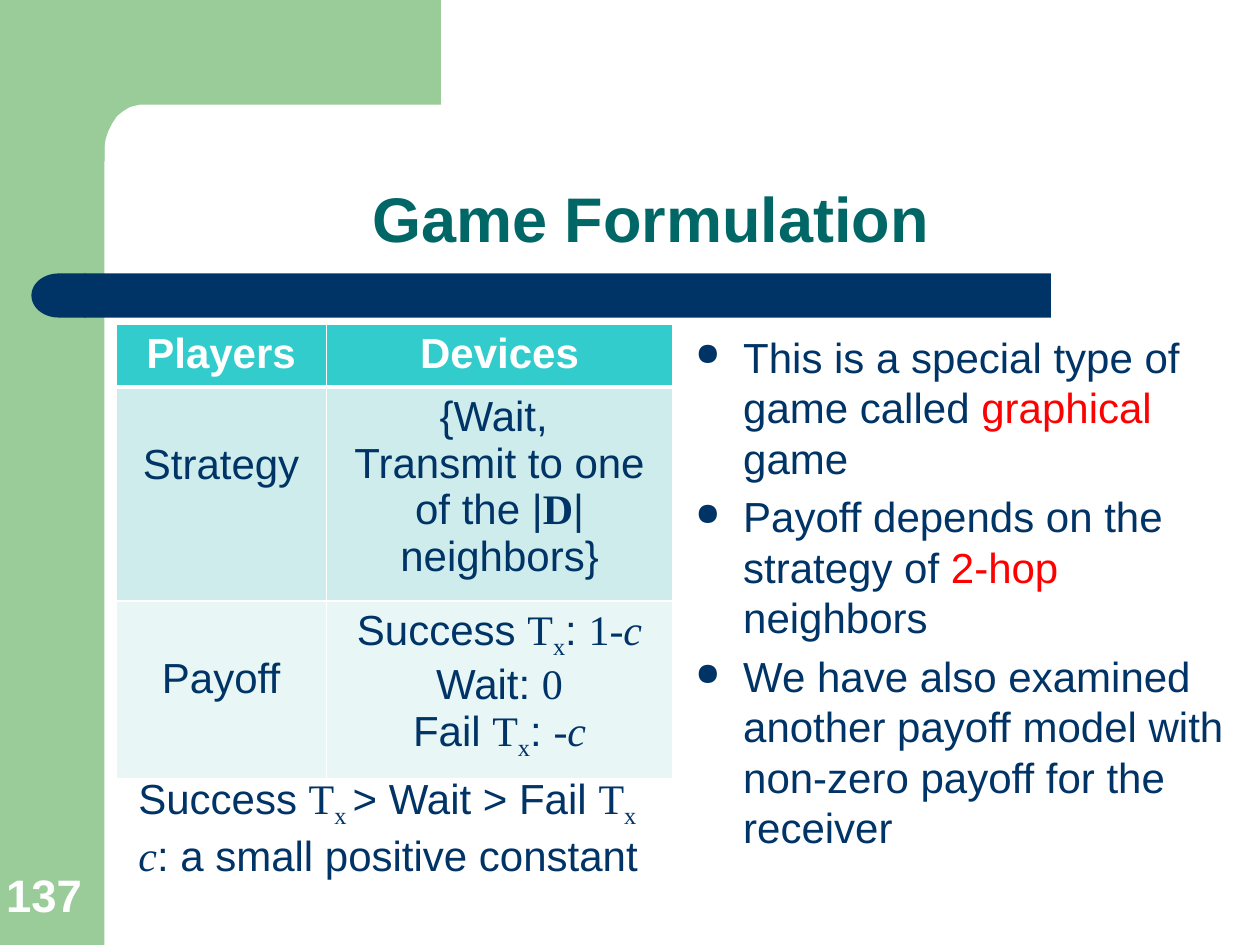
from dataclasses import dataclass
from lxml.etree import SubElement
from pptx import Presentation
from pptx.dml.color import RGBColor as Rgb
from pptx.enum.shapes import MSO_SHAPE as Kind
from pptx.enum.text import MSO_ANCHOR as Anchor, PP_ALIGN as Align
from pptx.oxml.ns import qn
from pptx.util import Inches as In, Pt


@dataclass(frozen=True)
class Theme:
    sans: str = "Arial"
    serif: str = "Times New Roman"
    green: str = "99CC99"
    navy: str = "003366"
    teal: str = "006666"
    white: str = "FFFFFF"
    red: str = "FF0000"
    rows: tuple = ("33CCCC", "CEECEC", "E8F6F6")
    title: int = 36
    page: int = 26
    text: int = 24


T = Theme()
HEAD = dict(bold=True, color=T.white)
MATH = dict(name=T.serif)
VAR = dict(name=T.serif, italic=True)
SUB = dict(name=T.serif, base="-25000")
HOT = dict(color=T.red)
TX = [("T", MATH), ("x", SUB)]

TITLE = [["Game Formulation"]]
PAGE = [["137"]]
POINTS = [
    ["This is a special type of game called ", ("graphical", HOT), " game"],
    ["Payoff depends on the strategy of ", ("2-hop", HOT), " neighbors"],
    ["We have also examined another payoff model with non-zero payoff for the receiver"],
]
GAME = [
    ([[("Players", HEAD)]], [[("Devices", HEAD)]]),
    ([["Strategy"]],
     [["{Wait, "],
      ["Transmit to one of the |", ("D", dict(name=T.serif, bold=True)), "| neighbors}"]]),
    ([["Payoff"]],
     [["Success ", *TX, ": ", ("1", MATH), ("-c", VAR)],
      ["Wait: ", ("0", MATH)],
      ["Fail ", *TX, ": ", ("-c", VAR)]]),
]
NOTES = [
    ["Success ", ("T", MATH), ("x ", SUB), "> Wait > Fail ", *TX],
    [("c", VAR), ": a small positive constant"],
]
COLS = (1.67, 2.75)
ROWS = (0.46, 1.59, 1.32)
EDGES = ("lnL", "lnR", "lnT", "lnB")

deck = Presentation()
deck.slide_width, deck.slide_height = In(10), In(7.5)
slide = deck.slides.add_slide(deck.slide_layouts[5])
shapes = slide.shapes


def place(shape, *box):
    for key, val in zip(("left", "top", "width", "height"), box):
        setattr(shape, key, In(val))


def paint(shape, color):
    shape.shadow.inherit = False
    shape.fill.solid()
    shape.fill.fore_color.rgb = Rgb.from_string(color)
    shape.line.fill.background()


def write(frame, paras, align=Align.LEFT, **look):
    frame.word_wrap = True
    for n, parts in enumerate(paras):
        para = frame.add_paragraph() if n else frame.paragraphs[0]
        para.alignment = align
        for part in parts:
            words, extra = (part, {}) if isinstance(part, str) else part
            fmt = dict(name=T.sans, size=T.text, bold=False, color=T.navy) | look | extra
            run = para.add_run()
            run.text = words
            font = run.font
            font.color.rgb = Rgb.from_string(fmt.pop("color"))
            fmt["size"] = Pt(fmt["size"])
            base = fmt.pop("base", None)
            for key, val in fmt.items():
                setattr(font, key, val)
            if base:
                run._r.get_or_add_rPr().set("baseline", base)


def label(paras, *box, **look):
    text = shapes.add_textbox(*map(In, box))
    write(text.text_frame, paras, **look)
    return text.text_frame


def bullet(para):
    para.space_before = Pt(T.text * 0.2)
    props = para._p.get_or_add_pPr()
    props.set("marL", str(In(0.38)))
    props.set("indent", str(-In(0.38)))
    tint = SubElement(props, qn("a:buClr"))
    SubElement(tint, qn("a:srgbClr"), val=T.navy)
    SubElement(props, qn("a:buSzPct"), val="75000")
    SubElement(props, qn("a:buChar"), char="●")


def border(cell, low):
    props = cell._tc.get_or_add_tcPr()
    for edge in EDGES:
        wide = low if edge == "lnB" else 1
        line = SubElement(props, qn("a:" + edge), w=str(Pt(wide)))
        fill = SubElement(line, qn("a:solidFill"))
        SubElement(fill, qn("a:srgbClr"), val=T.white)


def band(kind, color, *box):
    shape = shapes.add_shape(kind, *map(In, box))
    paint(shape, color)
    return shape


band(Kind.RECTANGLE, T.green, 0, 0, 0.83, 7.5)
pen = shapes.build_freeform(In(3.5), 0, scale=1.0)
curve = [(3.5, 0.83), (1.16, 0.83), (1.11, 0.83), (1.03, 0.85), (0.98, 0.88), (0.93, 0.92),
         (0.89, 0.98), (0.86, 1.04), (0.84, 1.1), (0.83, 1.16), (0.83, 1.28), (0.5, 1.28), (0.5, 0)]
pen.add_line_segments([(In(x), In(y)) for x, y in curve])
paint(pen.convert_to_shape(), T.green)
bar = band(Kind.ROUNDED_RECTANGLE, T.navy, 0.67, 2.17, 7.67, 0.35)
bar.adjustments[0] = 0
cap = band(Kind.FLOWCHART_DELAY, T.navy, 0.25, 2.17, 0.43, 0.35)
cap._element.spPr.xfrm.set("flipH", "1")

title = shapes.title
place(title, 0.83, 0.83, 8.67, 1.25)
write(title.text_frame, TITLE, Align.CENTER, size=T.title, bold=True, color=T.teal)
title.text_frame.vertical_anchor = Anchor.BOTTOM
title.text_frame.paragraphs[0].line_spacing = 0.9

for para in label(POINTS, 5.42, 2.58, 4.42, 3.17).paragraphs:
    bullet(para)
page = label(PAGE, -0.05, 6.83, 0.86, 0.53, size=T.page, bold=True, color=T.white)
page.vertical_anchor = Anchor.BOTTOM

grid = shapes.add_table(len(ROWS), len(COLS), In(0.92), In(2.57), In(sum(COLS)), In(sum(ROWS))).table
for col, wide in zip(grid.columns, COLS):
    col.width = In(wide)
for r, (row, high) in enumerate(zip(grid.rows, ROWS)):
    row.height = In(high)
    for c, cell in enumerate(row.cells):
        write(cell.text_frame, GAME[r][c], Align.CENTER)
        if r and not c:
            cell.margin_top = In(0.05 + T.text * 1.15 / 72)
        border(cell, 1 if r else 3)
        cell.fill.solid()
        cell.fill.fore_color.rgb = Rgb.from_string(T.rows[r])

label(NOTES, 1, 6.08, 4.33, 0.91)
deck.save("out.pptx")
